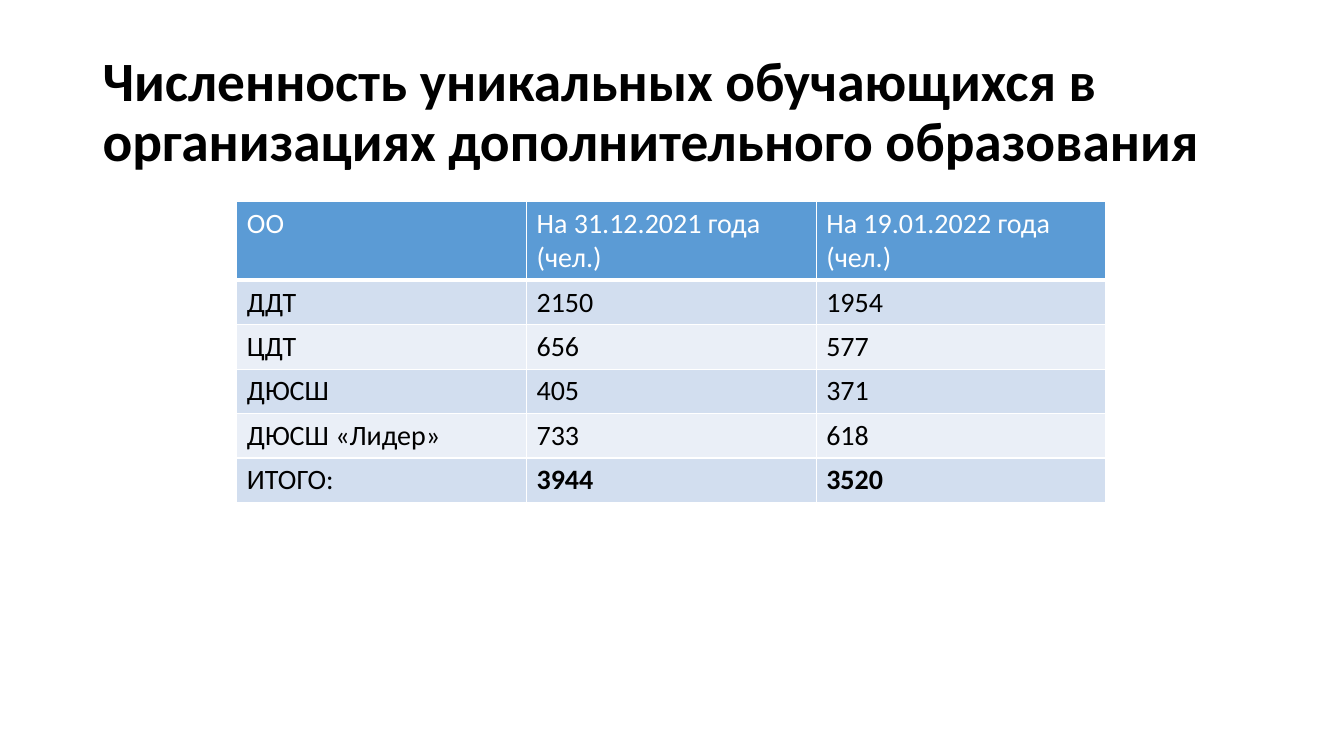
from lxml.etree import SubElement
from pptx import Presentation
from pptx.dml.color import RGBColor
from pptx.enum.text import MSO_ANCHOR, MSO_AUTO_SIZE, PP_ALIGN
from pptx.oxml.ns import qn
from pptx.util import Cm, Pt

FONT = "Calibri"
COLORS = {
    "text": "000000",
    "white": "FFFFFF",
    "head": "5B9BD5",
    "odd": "D2DEEF",
    "even": "EAEFF7",
}
TITLE = "Численность уникальных обучающихся в организациях дополнительного образования"
ROWS = [
    ("ОО", "На 31.12.2021 года (чел.)", "На 19.01.2022 года (чел.)"),
    ("ДДТ", "2150", "1954"),
    ("ЦДТ", "656", "577"),
    ("ДЮСШ", "405", "371"),
    ("ДЮСШ «Лидер»", "733", "618"),
    ("ИТОГО:", "3944", "3520"),
]


def color(name):
    return RGBColor.from_string(COLORS[name])


def style(para, size, tint, bold=False):
    font = para.font
    font.name = FONT
    font.size = Pt(size)
    font.bold = bold
    font.color.rgb = color(tint)


def add_title(slide, text):
    title = slide.shapes.title
    title.left, title.top = Cm(2.33), Cm(1.01)
    title.width, title.height = Cm(29.21), Cm(3.68)
    frame = title.text_frame
    frame.text = text
    frame.word_wrap = True
    frame.auto_size = MSO_AUTO_SIZE.NONE
    frame.vertical_anchor = MSO_ANCHOR.MIDDLE
    para = frame.paragraphs[0]
    para.alignment = PP_ALIGN.LEFT
    para.line_spacing = 0.9
    style(para, 39.6, "text", True)


def add_edge(cell, side, width):
    line = SubElement(cell._tc.get_or_add_tcPr(), qn("a:ln" + side), w=str(Pt(width)))
    fill = SubElement(line, qn("a:solidFill"))
    SubElement(fill, qn("a:srgbClr"), val=COLORS["white"])


def fill_cell(cell, text, tint, back, bold, top, base):
    cell.text = text
    style(cell.text_frame.paragraphs[0], 20, tint, bold)
    for side, width in (("L", 1), ("R", 1), ("T", top), ("B", base)):
        add_edge(cell, side, width)
    cell.fill.solid()
    cell.fill.fore_color.rgb = color(back)


def add_grid(slide, rows):
    wide, high, head = Cm(7.3), Cm(1.1), Cm(1.96)
    count, last = len(rows[0]), len(rows) - 1
    grid = slide.shapes.add_table(
        len(rows), count, Cm(5.97), Cm(5.08), wide * count, head + high * last
    ).table
    for col in grid.columns:
        col.width = wide
    for r, row in enumerate(rows):
        grid.rows[r].height = high if r else head
        back = ("odd" if r % 2 else "even") if r else "head"
        tint = "text" if r else "white"
        # A thick rule parts the header from the body
        top, base = 3 if r == 1 else 1, 1 if r else 3
        for c, text in enumerate(row):
            bold = r == last and c > 0
            fill_cell(grid.cell(r, c), text, tint, back, bold, top, base)


def main():
    deck = Presentation()
    deck.slide_width, deck.slide_height = Cm(33.87), Cm(19.05)
    slide = deck.slides.add_slide(deck.slide_layouts[5])
    # Heading
    add_title(slide, TITLE)
    # Student numbers
    add_grid(slide, ROWS)
    deck.save("out.pptx")


if __name__ == "__main__":
    main()
